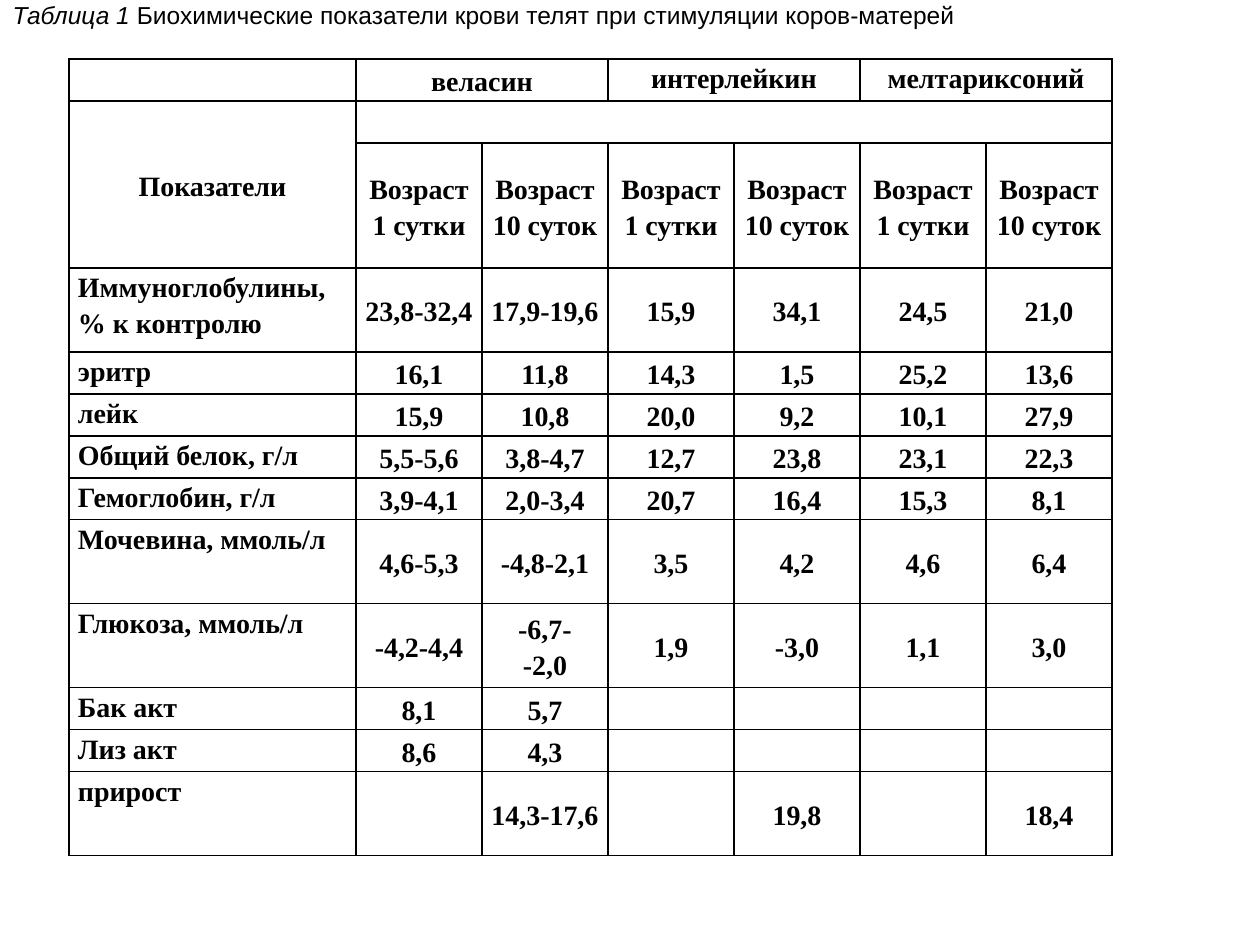
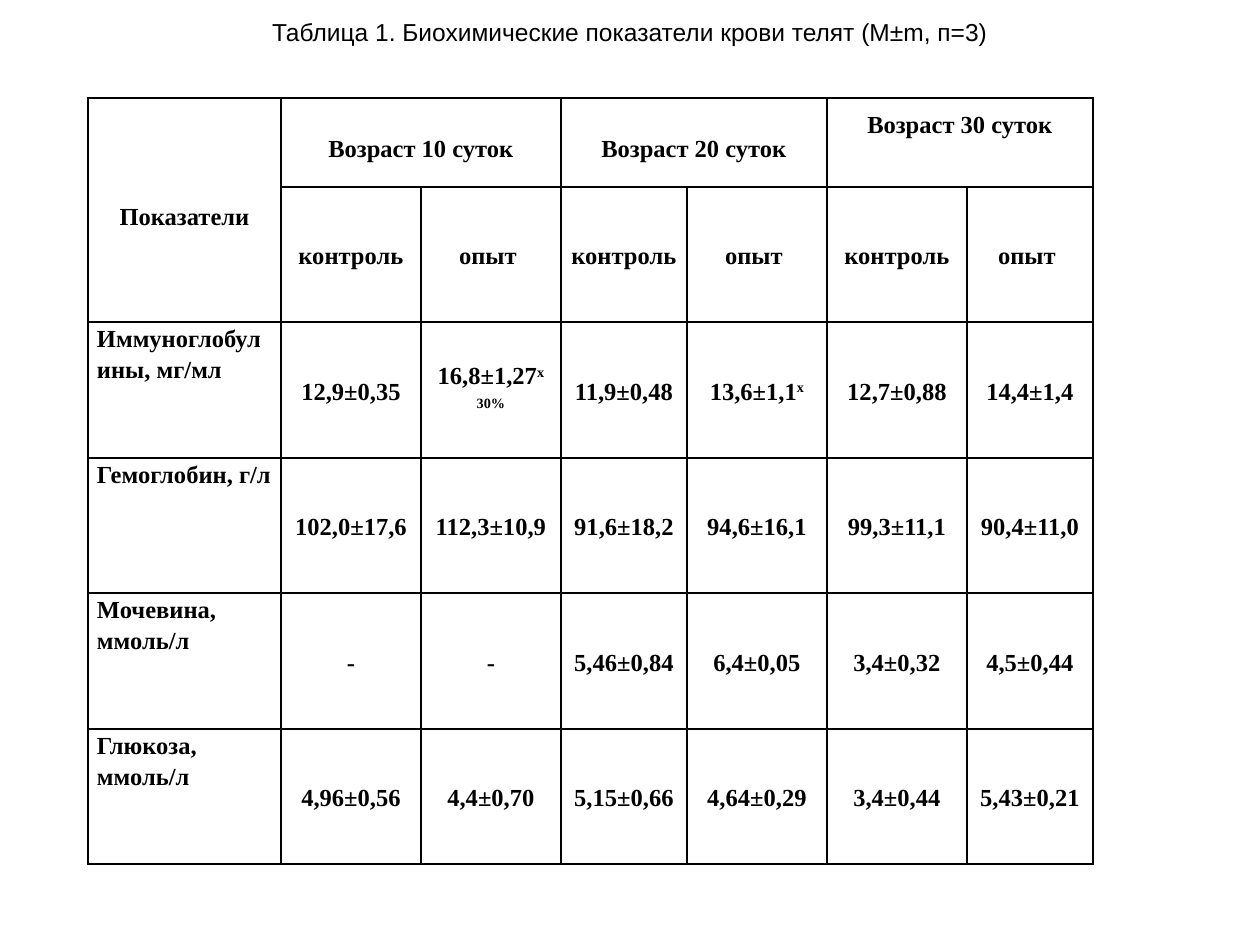
"""Build two slides with tables of calf blood biochemistry."""
from lxml.etree import SubElement
from pptx import Presentation
from pptx.dml.color import RGBColor
from pptx.enum.text import MSO_ANCHOR, MSO_AUTO_SIZE, PP_ALIGN
from pptx.oxml.ns import qn
from pptx.util import Emu, Pt

BLACK = "000000"
CAPTION_FONT, TABLE_FONT = "Arial", "Times New Roman"
CAPTION_SIZE = 14


def px(length):
    return Emu(round(length * 914400 / 126))


def style(span, font, size, color, bold=False, italic=False):
    span.font.name = font
    span.font.size = Pt(size)
    span.font.bold = bold
    span.font.italic = italic
    span.font.color.rgb = RGBColor.from_string(color)


ages = ["Возраст 1 сутки", "Возраст 10 суток"]
groups = ["контроль", "опыт "]

slides = [
    {
        "caption": [("Таблица 1", True),
                    (" Биохимические показатели крови телят при стимуляции коров-матерей", False)],
        "caption_align": PP_ALIGN.LEFT,
        "caption_anchor": MSO_ANCHOR.TOP,
        "origin": (69, 59),
        "columns": [287] + [126] * 6,
        "rows": [42, 42, 125, 84] + [42] * 4 + [84, 84, 42, 42, 84],
        "size": 16,
        "header_rows": 3,
        "title_spacing": 1.15,
        "top_titles": ["интерлейкин", "мелтариксоний"],
        "merges": [(0, 1, 0, 2), (0, 3, 0, 4), (0, 5, 0, 6), (1, 0, 2, 0), (1, 1, 1, 6)],
        "cells": [
            ["", "веласин", "", "интерлейкин", "", "мелтариксоний", ""],
            ["Показатели"] + [""] * 6,
            [""] + ages * 3,
            ["Иммуноглобулины, % к контролю", "23,8-32,4", "17,9-19,6", "15,9", "34,1", "24,5", "21,0"],
            ["эритр", "16,1", "11,8", "14,3", "1,5", "25,2", "13,6"],
            ["лейк", "15,9", "10,8", "20,0", "9,2", "10,1", "27,9"],
            ["Общий белок, г/л", "5,5-5,6", "3,8-4,7", "12,7", "23,8", "23,1", "22,3"],
            ["Гемоглобин, г/л", "3,9-4,1", "2,0-3,4", "20,7", "16,4", "15,3", "8,1"],
            ["Мочевина, ммоль/л", "4,6-5,3", "-4,8-2,1", "3,5", "4,2", "4,6", "6,4"],
            ["Глюкоза, ммоль/л", "-4,2-4,4", "-6,7-\n-2,0", "1,9", "-3,0", "1,1", "3,0"],
            ["Бак акт", "8,1", "5,7", "", "", "", ""],
            ["Лиз акт", "8,6", "4,3", "", "", "", ""],
            ["прирост", "", "14,3-17,6", "", "19,8", "", "18,4"],
        ],
    },
    {
        "caption": [("Таблица 1. Биохимические показатели крови телят (M±m, п=3)", False)],
        "caption_align": PP_ALIGN.CENTER,
        "caption_anchor": MSO_ANCHOR.MIDDLE,
        "origin": (88, 98),
        "columns": [193, 140, 140, 126, 140, 140, 126],
        "rows": [89, 135, 136, 135, 136, 135],
        "size": 14,
        "header_rows": 2,
        "title_spacing": 1.5,
        "top_titles": ["Возраст 30 суток"],
        "merges": [(0, 0, 1, 0), (0, 1, 0, 2), (0, 3, 0, 4), (0, 5, 0, 6)],
        "cells": [
            ["Показатели", "Возраст 10 суток", "", "Возраст 20 суток", "", "Возраст 30 суток", ""],
            [""] + groups * 3,
            ["Иммуноглобулины, мг/мл", "12,9±0,35", "16,8±1,27^х\n^30%", "11,9±0,48",
             "13,6±1,1^х", "12,7±0,88", "14,4±1,4"],
            ["Гемоглобин, г/л", "102,0±17,6", "112,3±10,9", "91,6±18,2", "94,6±16,1", "99,3±11,1", "90,4±11,0"],
            ["Мочевина, ммоль/л", "-", "-", "5,46±0,84", "6,4±0,05", "3,4±0,32", "4,5±0,44"],
            ["Глюкоза, ммоль/л", "4,96±0,56", "4,4±0,70", "5,15±0,66", "4,64±0,29", "3,4±0,44", "5,43±0,21"],
        ],
    },
]

deck = Presentation()
deck.slide_width, deck.slide_height = px(1260), px(945)

for content in slides:
    page = deck.slides.add_slide(deck.slide_layouts[5])

    caption = page.shapes.title
    caption.left, caption.top, caption.width, caption.height = px(0), px(0), px(1260), px(63)
    frame = caption.text_frame
    frame.auto_size = MSO_AUTO_SIZE.NONE
    frame.word_wrap = True
    frame.margin_top = frame.margin_bottom = 0
    frame.vertical_anchor = content["caption_anchor"]
    para = frame.paragraphs[0]
    para.alignment = content["caption_align"]
    for text, italic in content["caption"]:
        span = para.add_run()
        span.text = text
        style(span, CAPTION_FONT, CAPTION_SIZE, BLACK, italic=italic)

    columns, rows = content["columns"], content["rows"]
    left, top = content["origin"]
    table = page.shapes.add_table(len(rows), len(columns), px(left), px(top),
                                  px(sum(columns)), px(sum(rows))).table
    table.first_row = table.horz_banding = False
    for column, width in zip(table.columns, columns):
        column.width = px(width)
    for row, height in zip(table.rows, rows):
        row.height = px(height)
    for first_row, first_column, last_row, last_column in content["merges"]:
        table.cell(first_row, first_column).merge(table.cell(last_row, last_column))

    for row_index, row_texts in enumerate(content["cells"]):
        for column_index, text in enumerate(row_texts):
            cell = table.cell(row_index, column_index)
            cell.margin_left = cell.margin_right = px(9)
            cell.margin_top = cell.margin_bottom = 0
            properties = cell._tc.get_or_add_tcPr()
            for side in ("a:lnL", "a:lnR", "a:lnT", "a:lnB"):
                border = SubElement(properties, qn(side), w=str(Pt(1)))
                SubElement(SubElement(border, qn("a:solidFill")), qn("a:srgbClr"), val=BLACK)
            cell.fill.background()
            if not text:
                continue

            is_label = column_index == 0 and row_index >= content["header_rows"]
            at_top = is_label or text in content["top_titles"]
            cell.vertical_anchor = MSO_ANCHOR.TOP if at_top else MSO_ANCHOR.MIDDLE
            for line_index, line in enumerate(text.split("\n")):
                frame = cell.text_frame
                para = frame.add_paragraph() if line_index else frame.paragraphs[0]
                para.alignment = PP_ALIGN.LEFT if is_label else PP_ALIGN.CENTER
                para.line_spacing = content["title_spacing"] if row_index == 0 else 1.15
                for part_index, part in enumerate(line.split("^")):
                    if part:
                        span = para.add_run()
                        span.text = part
                        style(span, TABLE_FONT, content["size"], BLACK, bold=True)
                        if part_index:
                            span.font._element.set("baseline", "30000")

deck.save("out.pptx")
